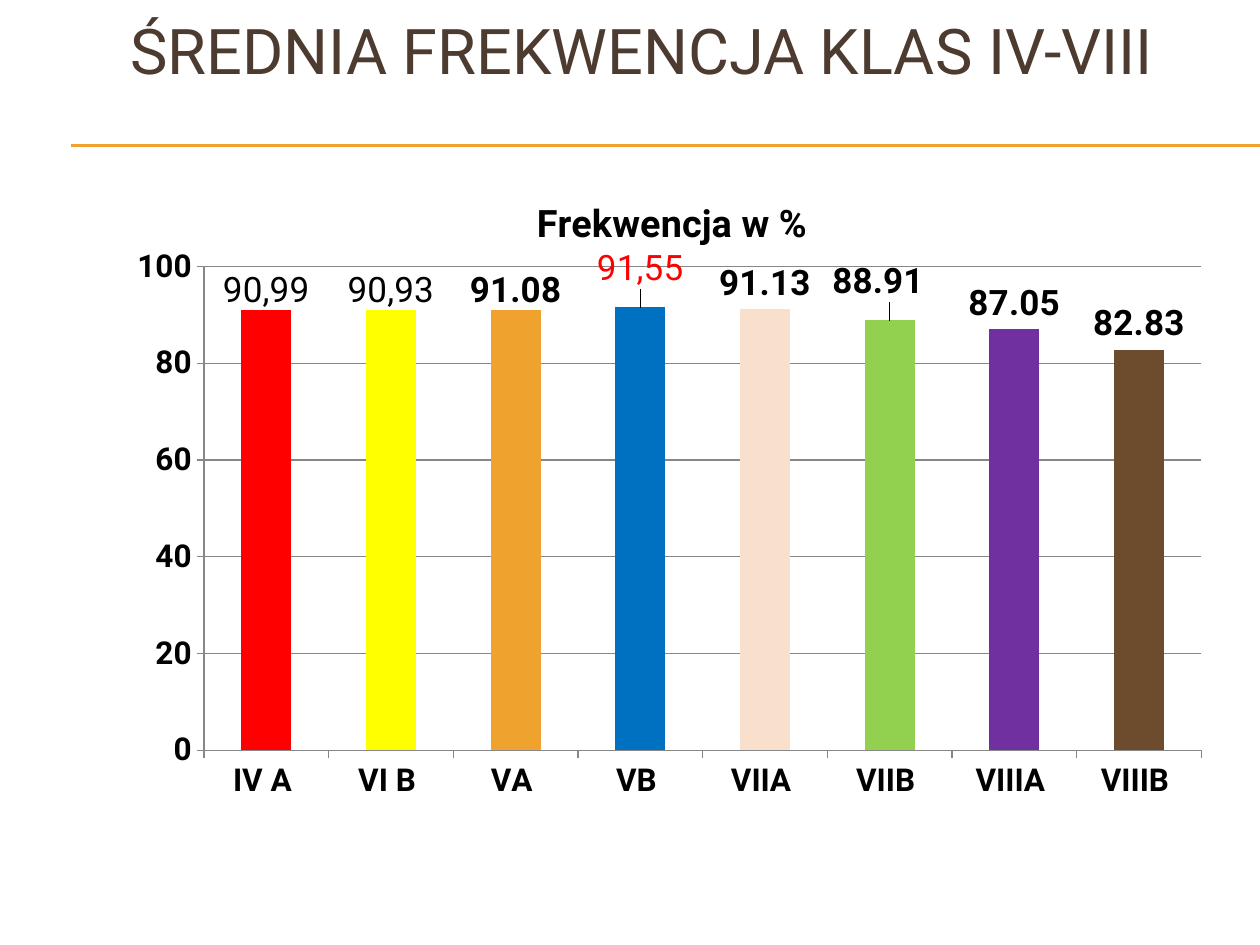
from lxml import etree
from pptx import Presentation
from pptx.chart.data import CategoryChartData
from pptx.dml.color import RGBColor
from pptx.enum.chart import XL_CHART_TYPE, XL_LABEL_POSITION, XL_TICK_MARK
from pptx.enum.shapes import MSO_CONNECTOR
from pptx.enum.text import MSO_ANCHOR, PP_ALIGN
from pptx.oxml.ns import qn
from pptx.util import Inches, Pt

COLUMNS = XL_CHART_TYPE.COLUMN_CLUSTERED
OUTSIDE_END = XL_LABEL_POSITION.OUTSIDE_END
TICK_OUT = XL_TICK_MARK.OUTSIDE
TICK_NONE = XL_TICK_MARK.NONE
STRAIGHT = MSO_CONNECTOR.STRAIGHT
MIDDLE = MSO_ANCHOR.MIDDLE
CENTER = PP_ALIGN.CENTER

FONT = "Roboto"
BLACK = RGBColor(0x00, 0x00, 0x00)
WHITE = RGBColor(0xFF, 0xFF, 0xFF)
BROWN = RGBColor(0x4E, 0x3B, 0x30)
ORANGE = RGBColor(0xF0, 0xA2, 0x2E)
GRAY = RGBColor(0x87, 0x87, 0x87)
RED = RGBColor(0xFF, 0x00, 0x00)
YELLOW = RGBColor(0xFF, 0xFF, 0x00)
BLUE = RGBColor(0x00, 0x70, 0xC0)
PEACH = RGBColor(0xF9, 0xE0, 0xCD)
GREEN = RGBColor(0x92, 0xD0, 0x50)
PURPLE = RGBColor(0x70, 0x30, 0xA0)
COFFEE = RGBColor(0x6C, 0x4C, 0x2C)

ATTENDANCE = [
    ("IV A ", 90.96, RED),
    ("VI B ", 90.93, YELLOW),
    ("VA ", 91.08, ORANGE),
    ("VB ", 91.55, BLUE),
    ("VIIA ", 91.13, PEACH),
    ("VIIB ", 88.91, GREEN),
    ("VIIIA ", 87.05, PURPLE),
    ("VIIIB ", 82.83, COFFEE),
]
LABEL_CHANGES = {
    0: ("90,99", BLACK, 0, 0.01),
    1: ("90,93", BLACK, 0, 0.01),
    2: (None, BLACK, 0, 0.01),
    3: ("91,55", RED, 0, -0.02),
    5: (None, BLACK, -0.01, -0.02),
}


def set_format(target, values):
    """Set each named attribute of the target."""
    for name, value in values.items():
        setattr(target, name, value)


def set_font(font, color, **values):
    """Give a font the slide typeface, a colour and further values."""
    set_format(font, {"name": FONT, **values})
    font.color.rgb = color


def add_layout(parent, index, **values):
    """Insert a manual chart layout into the parent at the index."""
    for old in parent.findall(qn("c:layout")):
        parent.remove(old)
    layout = etree.Element(qn("c:layout"))
    manual = etree.SubElement(layout, qn("c:manualLayout"))
    for name, value in values.items():
        etree.SubElement(manual, qn(f"c:{name}"), val=str(value))
    parent.insert(index, layout)


def place_title(page, left, top, width, height):
    """Write the slide heading in its placeholder."""
    title = page.shapes.title
    set_format(title, {"left": left, "top": top, "width": width, "height": height})
    frame = title.text_frame
    set_format(frame, {"vertical_anchor": MIDDLE, "word_wrap": True})
    para = frame.paragraphs[0]
    para.alignment = CENTER
    span = para.add_run()
    span.text = "ŚREDNIA FREKWENCJA KLAS IV-VIII"
    set_font(span.font, BROWN, size=Pt(36))


def place_rule(page, left, top, width):
    """Draw one thin horizontal rule below the heading."""
    rule = page.shapes.add_connector(STRAIGHT, left, top, left + width, top)
    rule.line.color.rgb = ORANGE
    rule.line.width = Pt(0.75)
    etree.SubElement(rule.element.spPr, qn("a:effectLst"))


def style_axes(chart):
    """Format the class axis and the percentage axis."""
    values = chart.value_axis
    set_format(values, {"minimum_scale": 0, "maximum_scale": 100, "major_unit": 20})
    set_format(values.tick_labels, {"number_format": "#,##0", "number_format_is_linked": False})
    values.has_major_gridlines = True
    values.major_gridlines.format.line.color.rgb = GRAY
    for axis in (chart.category_axis, values):
        set_format(axis, {"major_tick_mark": TICK_OUT, "minor_tick_mark": TICK_NONE})
        axis.format.line.color.rgb = GRAY
        set_font(axis.tick_labels.font, BLACK, size=Pt(18), bold=True)


def style_labels(plot, series):
    """Show the values and adjust the labels that differ."""
    plot.has_data_labels = True
    labels = series.data_labels
    set_format(labels, {"show_value": True, "position": OUTSIDE_END,
                        "number_format": "General", "number_format_is_linked": False})
    set_font(labels.font, BLACK, size=Pt(20), bold=True)
    for index, (text, color, shift_x, shift_y) in LABEL_CHANGES.items():
        label = series.points[index].data_label
        label.position = OUTSIDE_END
        if text:
            span = label.text_frame.paragraphs[0].add_run()
            span.text = text
            set_font(span.font, color, size=Pt(20), bold=False)
        else:
            set_font(label.font, color, size=Pt(20), bold=True)
    for element in labels._element.findall(qn("c:dLbl")):
        index = int(element.find(qn("c:idx")).get("val"))
        shift_x, shift_y = LABEL_CHANGES[index][2:]
        add_layout(element, 1, x=shift_x, y=shift_y)


def place_chart(page, left, top, width, height):
    """Add the column chart of attendance by class."""
    data = CategoryChartData()
    data.categories = [name for name, _, _ in ATTENDANCE]
    data.add_series("Series 1", [value for _, value, _ in ATTENDANCE])
    chart = page.shapes.add_chart(COLUMNS, left, top, width, height, data).chart
    chart.has_legend = False
    set_font(chart.font, BLACK, size=Pt(18))

    chart.has_title = True
    span = chart.chart_title.text_frame.paragraphs[0].add_run()
    span.text = "Frekwencja w %"
    set_font(span.font, BLACK, size=Pt(21.6), bold=True)
    add_layout(chart.chart_title._element, 1, xMode="edge", yMode="edge", x=0.4, y=0.02)

    plot = chart.plots[0]
    set_format(plot, {"gap_width": 150, "vary_by_categories": False})
    add_layout(plot._element.getparent(), 0, layoutTarget="inner", xMode="edge",
               yMode="edge", x=0.117, y=0.137, w=0.866, h=0.744)
    series = plot.series[0]
    series.format.fill.solid()
    series.format.fill.fore_color.rgb = PEACH
    for index, (_, _, color) in enumerate(ATTENDANCE):
        fill = series.points[index].format.fill
        fill.solid()
        fill.fore_color.rgb = color
    style_axes(chart)
    style_labels(plot, series)


def main():
    """Build the attendance slide and save the deck."""
    deck = Presentation()
    set_format(deck, {"slide_width": Inches(10), "slide_height": Inches(7.5)})
    page = deck.slides.add_slide(deck.slide_layouts[5])
    page.background.fill.solid()
    page.background.fill.fore_color.rgb = WHITE
    for top in (1.15, 1.16):
        place_rule(page, Inches(0.56), Inches(top), Inches(9.44))
    place_title(page, Inches(0.5), Inches(0), Inches(9.19), Inches(0.78))
    place_chart(page, Inches(0.55), Inches(1.41), Inches(9.14), Inches(5.16))
    deck.save("out.pptx")


if __name__ == "__main__":
    main()
